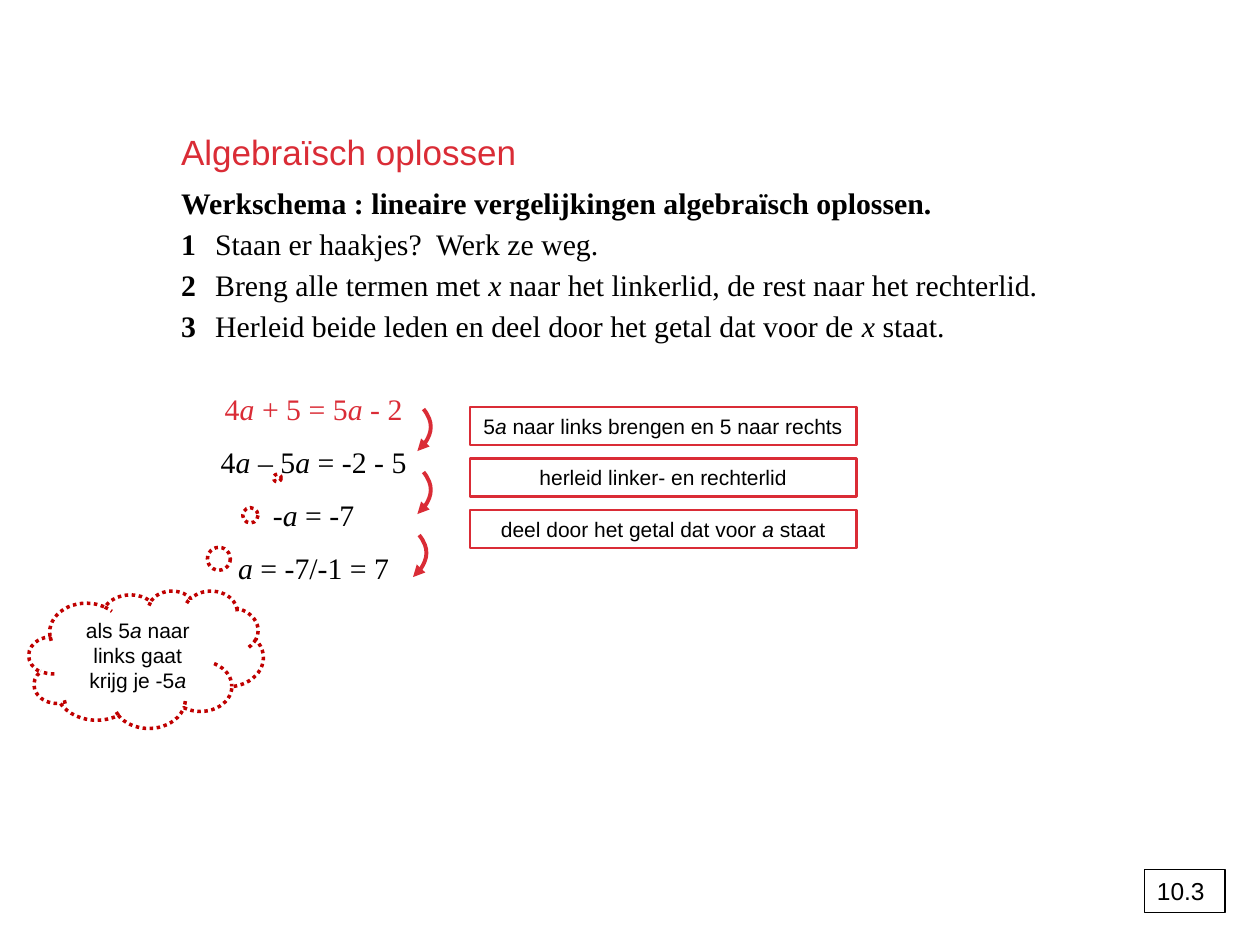
from dataclasses import dataclass

from lxml import etree
from pptx import Presentation
from pptx.dml.color import RGBColor
from pptx.enum.dml import MSO_LINE
from pptx.enum.shapes import MSO_SHAPE
from pptx.enum.text import MSO_ANCHOR, MSO_AUTO_SIZE, PP_ALIGN
from pptx.oxml.ns import qn
from pptx.util import Pt

RECT, CLOUD = MSO_SHAPE.RECTANGLE, MSO_SHAPE.CLOUD_CALLOUT
LEFT, CENTER = PP_ALIGN.LEFT, PP_ALIGN.CENTER
TOP, MIDDLE = MSO_ANCHOR.TOP, MSO_ANCHOR.MIDDLE
NO_FIT = MSO_AUTO_SIZE.NONE
DOTTED = MSO_LINE.ROUND_DOT
TITLE_ONLY = 5


@dataclass(frozen=True)
class Theme:
    red: RGBColor = RGBColor(0xDA, 0x2C, 0x36)
    dark_red: RGBColor = RGBColor(0xC0, 0x00, 0x00)
    black: RGBColor = RGBColor(0, 0, 0)
    white: RGBColor = RGBColor(0xFF, 0xFF, 0xFF)
    sans: str = "Arial"
    serif: str = "Times New Roman"
    title: int = 20
    body: int = 17
    number: int = 14
    note: int = 12


T = Theme()

STEPS = [
    "Staan er haakjes?  Werk ze weg.",
    "Breng alle termen met *x* naar het linkerlid, de rest naar het rechterlid.",
    "Herleid beide leden en deel door het getal dat voor de *x* staat.",
]
EQUATIONS = ["4*a* + 5 = 5*a* - 2", "4*a* – 5*a* = -2 - 5", "-*a *= -7", "*a* = -7/-1 = 7"]
NOTES = [
    "5*a* naar links brengen en 5 naar rechts",
    "herleid linker- en rechterlid",
    "deel door het getal dat voor *a* staat",
]
ARROW_TIPS = [(238.5, 257.75), (238.5, 293.75), (236, 329.75)]
ARROW_BEND = [(8, -6), (9.5, -16.5), (3.5, -24)]


def add_runs(p, text, font=T.sans, size=T.note, color=T.black, bold=False):
    """Add text to a paragraph; parts between asterisks become italic."""
    for i, part in enumerate(text.split("*")):
        if part:
            r = p.add_run()
            r.text = part
            r.font.name, r.font.size, r.font.bold = font, Pt(size), bold
            r.font.italic = i % 2 == 1
            r.font.color.rgb = color


def format_paragraph(p, align=LEFT, spacing=None, before=0, hanging=0):
    p.alignment = align
    if spacing:
        p.line_spacing = spacing
    if before:
        p.space_before = Pt(before)
    if hanging:
        pPr = p._p.get_or_add_pPr()
        pPr.set("marL", str(Pt(hanging)))
        pPr.set("indent", str(-Pt(hanging)))


def set_frame(tf, anchor=TOP, margin=None):
    tf.word_wrap, tf.auto_size, tf.vertical_anchor = True, NO_FIT, anchor
    if margin is not None:
        tf.margin_left = tf.margin_top = tf.margin_right = tf.margin_bottom = Pt(margin)


def next_paragraph(tf, index):
    return tf.add_paragraph() if index else tf.paragraphs[0]


def add_title(slide, text):
    sp = slide.shapes.title
    sp.left, sp.top, sp.width, sp.height = Pt(103.5), Pt(62.5), Pt(540.5), Pt(45.5)
    set_frame(sp.text_frame, MIDDLE, 0)
    p = sp.text_frame.paragraphs[0]
    format_paragraph(p, spacing=1.1)
    add_runs(p, text, size=T.title, color=T.red)


def add_scheme(slide, heading, steps):
    tf = slide.shapes.add_textbox(Pt(103.5), Pt(103.5), Pt(504), Pt(93.5)).text_frame
    set_frame(tf, margin=0)
    style = dict(font=T.serif, size=T.body)
    for i, text in enumerate([heading] + steps):
        p = next_paragraph(tf, i)
        format_paragraph(p, spacing=1.1, before=1 if i else 0, hanging=19.5)
        add_runs(p, str(i) if i else text, bold=True, **style)
        if i:
            add_runs(p, "\t" + text, **style)


def add_equations(slide, equations):
    tf = slide.shapes.add_textbox(Pt(93.5), Pt(219.5), Pt(171.5), Pt(124)).text_frame
    set_frame(tf)
    for i, text in enumerate(equations):
        p = next_paragraph(tf, i)
        format_paragraph(p, CENTER, before=10 if i else 0, hanging=27.5)
        add_runs(p, text, T.serif, T.body, T.black if i else T.red)


def add_shape(slide, kind, box, text, line, width, fill=None, size=T.note, align=CENTER):
    sp = slide.shapes.add_shape(kind, *map(Pt, box))
    sp.shadow.inherit = False
    if fill is None:
        sp.fill.background()
    else:
        sp.fill.solid()
        sp.fill.fore_color.rgb = fill
    sp.line.color.rgb, sp.line.width = line, Pt(width)
    set_frame(sp.text_frame)
    p = sp.text_frame.paragraphs[0]
    format_paragraph(p, align)
    add_runs(p, text, size=size)
    return sp


def add_curved_arrow(slide, x, y):
    """Draw one Bézier curve with its arrowhead at (x, y)."""
    builder = slide.shapes.build_freeform(Pt(x), Pt(y))
    builder.add_line_segments([(Pt(x + dx), Pt(y + dy)) for dx, dy in ARROW_BEND], close=False)
    sp = builder.convert_to_shape()
    sp.shadow.inherit = False
    sp.fill.background()
    sp.line.color.rgb, sp.line.width = T.red, Pt(2.25)
    etree.SubElement(sp.line._get_or_add_ln(), qn("a:headEnd"), type="triangle")
    segments = list(sp._element.iter(qn("a:lnTo")))
    curve = etree.SubElement(segments[0].getparent(), qn("a:cubicBezTo"))
    for segment in segments:
        curve.append(segment[0])
        segment.getparent().remove(segment)


def main():
    prs = Presentation()
    prs.slide_width, prs.slide_height = Pt(720), Pt(540)
    slide = prs.slides.add_slide(prs.slide_layouts[TITLE_ONLY])

    add_title(slide, "Algebraïsch oplossen")
    add_scheme(slide, "Werkschema : lineaire vergelijkingen algebraïsch oplossen.", STEPS)
    add_equations(slide, EQUATIONS)
    for i, note in enumerate(NOTES):
        add_shape(slide, RECT, (268.5, 232.5 + 29.5 * i, 221, 21.75), note, T.red, 1.5)

    cloud = add_shape(slide, CLOUD, (16.5, 337.5, 134, 78.5),
                      "als 5*a* naar links gaat krijg je -5*a*", T.dark_red, 2, T.white)
    cloud.line.dash_style = DOTTED
    cloud.adjustments[0], cloud.adjustments[1] = 0.56, -1.32

    for tip in ARROW_TIPS:
        add_curved_arrow(slide, *tip)
    add_shape(slide, RECT, (654, 497, 46, 24.5), "10.3", T.black, 0.75,
              size=T.number, align=LEFT)

    prs.save("out.pptx")


if __name__ == "__main__":
    main()
